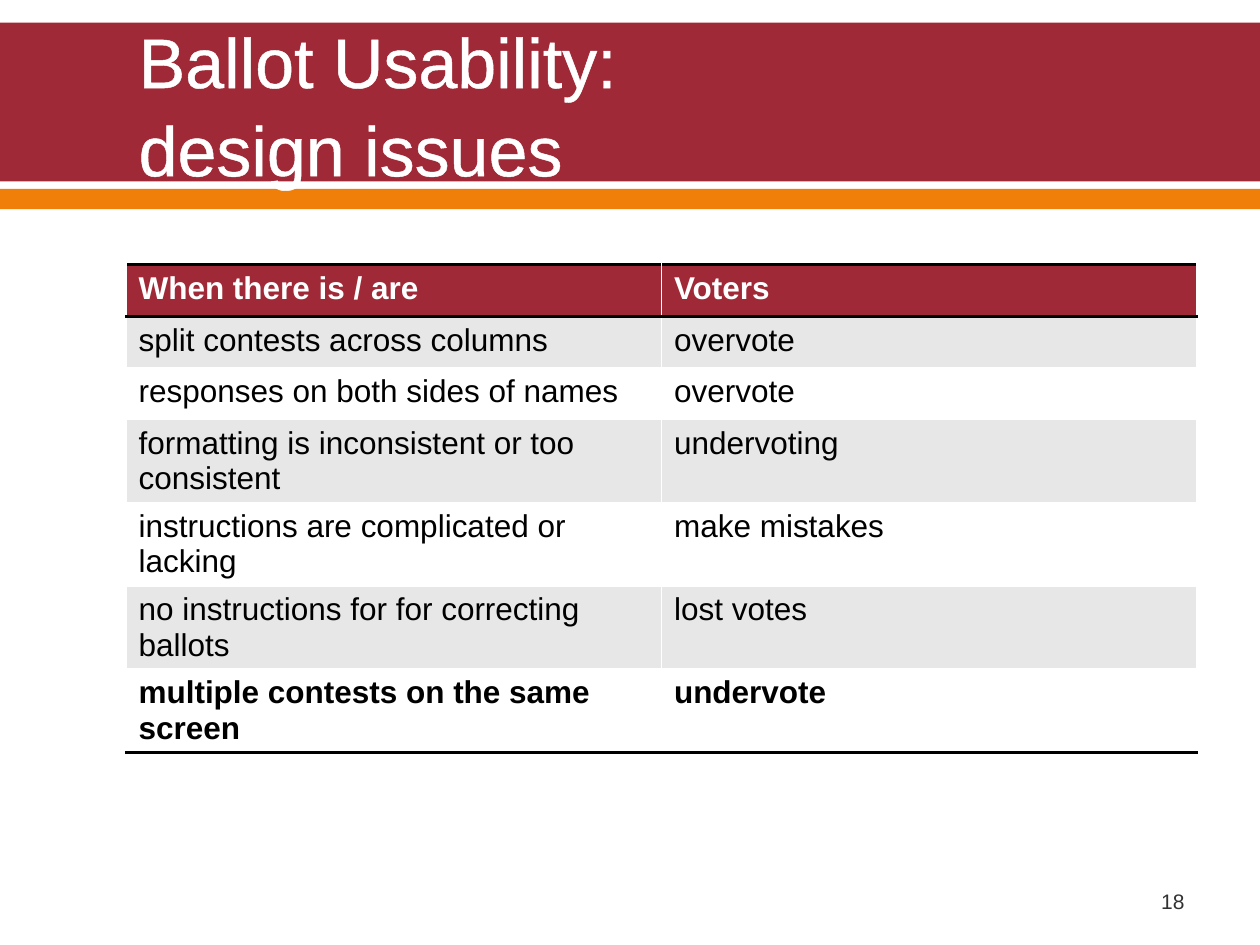
from lxml.etree import SubElement
from pptx import Presentation
from pptx.dml.color import RGBColor
from pptx.enum.shapes import MSO_SHAPE
from pptx.enum.text import MSO_ANCHOR, MSO_AUTO_SIZE, PP_ALIGN
from pptx.oxml.ns import qn
from pptx.util import Inches, Pt

RED, ORANGE, GREY = "9F2936", "F07F09", "E7E7E7"
WHITE, BLACK, DARK = "FFFFFF", "000000", "323232"

ROWS = [
    ("When there is / are", "Voters"),
    ("split contests across columns", "overvote"),
    ("responses on both sides of names", "overvote"),
    ("formatting is inconsistent or too consistent", "undervoting"),
    ("instructions are complicated or lacking", "make mistakes"),
    ("no instructions for for correcting ballots", "lost votes"),
    ("multiple contests on the same screen", "undervote"),
]


def rgb(color):
    return RGBColor.from_string(color)


def add_run(p, text, size, color, bold=False):
    r = p.add_run()
    r.text = text
    r.font.name = "Arial"
    r.font.size = Pt(size)
    r.font.bold = bold
    r.font.color.rgb = rgb(color)
    return r


def add_line(parent, tag, color, width, index):
    ln = SubElement(parent, qn(tag), w=str(Pt(width)))
    fill = SubElement(ln, qn("a:solidFill"))
    SubElement(fill, qn("a:srgbClr"), val=color)
    parent.insert(index, ln)


def add_band(s, top, height, color):
    sp = s.shapes.add_shape(MSO_SHAPE.RECTANGLE, 0, Inches(top),
                            Inches(10), Inches(height))
    sp.shadow.inherit = False
    sp.fill.solid()
    sp.fill.fore_color.rgb = rgb(color)
    sp.line.fill.background()
    # Bands lie behind the title
    s.shapes._spTree.insert(2, sp._element)


def set_title(s, lines):
    sp = s.shapes.title
    sp.left, sp.top = Inches(1), Inches(0.2)
    sp.width, sp.height = Inches(8.5), Inches(1.22)
    tf = sp.text_frame
    tf.auto_size = MSO_AUTO_SIZE.NONE
    tf.vertical_anchor = MSO_ANCHOR.MIDDLE
    p = tf.paragraphs[0]
    p.alignment = PP_ALIGN.LEFT
    p.line_spacing = 1.05
    for i, line in enumerate(lines):
        if i:
            p.add_line_break()
        r = add_run(p, line, 40, WHITE)
        add_line(r.font._element, "a:ln", WHITE, 1.1, 0)


def add_page_number(s, number):
    sp = s.shapes.add_textbox(Inches(7.17), Inches(6.95),
                              Inches(2.33), Inches(0.4))
    tf = sp.text_frame
    tf.word_wrap = True
    tf.vertical_anchor = MSO_ANCHOR.MIDDLE
    p = tf.paragraphs[0]
    p.alignment = PP_ALIGN.RIGHT
    add_run(p, number, 12, DARK)


def add_issue_table(s, rows):
    row_height = Inches(0.41)
    table = s.shapes.add_table(len(rows), 2, Inches(1), Inches(2.1),
                               Inches(8.5), row_height * len(rows)).table
    last = len(rows) - 1
    for i, texts in enumerate(rows):
        header = i == 0
        fill = RED if header else GREY if i % 2 else WHITE
        borders = ["a:lnT", "a:lnB"] if header else ["a:lnB"] if i == last else []
        for j, text in enumerate(texts):
            cell = table.cell(i, j)
            cell.fill.solid()
            cell.fill.fore_color.rgb = rgb(fill)
            add_run(cell.text_frame.paragraphs[0], text, 18,
                    WHITE if header else BLACK, bold=i in (0, last))
            for k, tag in enumerate(borders):
                add_line(cell._tc.get_or_add_tcPr(), tag, BLACK, 2, k)


def main():
    prs = Presentation()
    prs.slide_width, prs.slide_height = Inches(10), Inches(7.5)
    s = prs.slides.add_slide(prs.slide_layouts[5])

    # Header
    add_band(s, 1.5, 0.16, ORANGE)
    add_band(s, 0.18, 1.26, RED)
    set_title(s, ["Ballot Usability: ", "design issues"])

    # Content and footer
    add_issue_table(s, ROWS)
    add_page_number(s, "18")

    prs.save("out.pptx")


if __name__ == "__main__":
    main()
